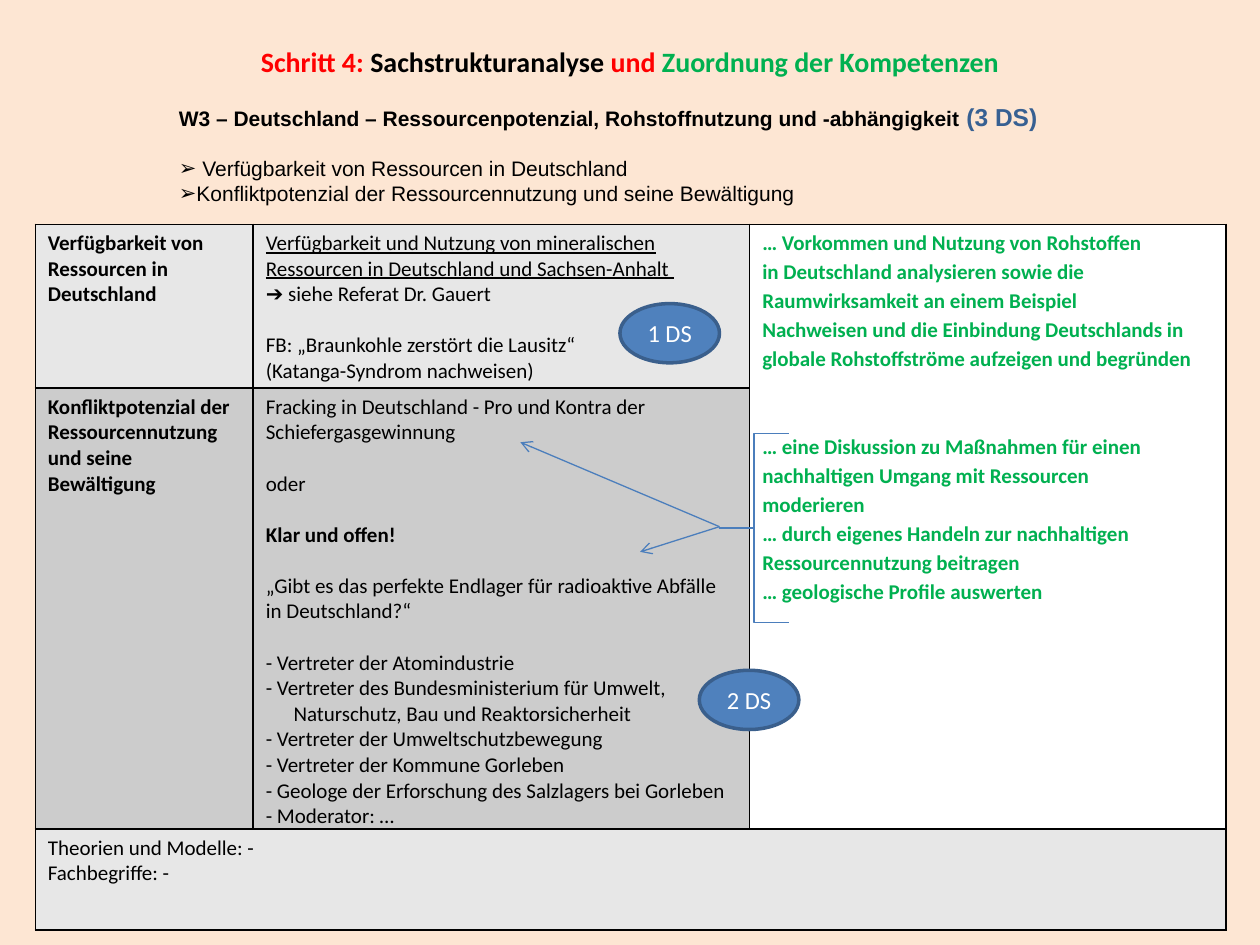
from lxml import etree
from pptx import Presentation
from pptx.dml.color import RGBColor
from pptx.enum.shapes import MSO_CONNECTOR, MSO_SHAPE
from pptx.enum.text import MSO_ANCHOR, PP_ALIGN
from pptx.oxml.ns import qn
from pptx.util import Inches, Pt

ELLIPSE, BRACE = MSO_SHAPE.OVAL, MSO_SHAPE.LEFT_BRACE
STRAIGHT = MSO_CONNECTOR.STRAIGHT
TOP, MIDDLE = MSO_ANCHOR.TOP, MSO_ANCHOR.MIDDLE
LEFT, CENTER = PP_ALIGN.LEFT, PP_ALIGN.CENTER

BLACK, WHITE, RED, GREEN = "000000", "FFFFFF", "FF0000", "00B050"
LIGHT, DARK = "E7E7E7", "CCCCCC"
BLUE, EDGE, THIN = "4F81BD", "3A5F8C", "4B7EBC"
BLANK = 14.6

COLS, ROWS = (1.73, 3.94, 3.78), (1.3, 3.5, 0.8)
TABLE_AT = (0.28, 1.78)
HUB = (5.71, 4.18)

RESOURCES = [
    ("Verfügbarkeit und Nutzung von mineralischen Ressourcen in Deutschland und Sachsen-Anhalt ",
     {"underline": True}),
    ("➔ siehe Referat Dr. Gauert", {}),
    ("FB: „Braunkohle zerstört die Lausitz“", {"before": BLANK}),
    ("(Katanga-Syndrom nachweisen)", {}),
]
CONFLICTS = [
    ("Fracking in Deutschland - Pro und Kontra der Schiefergasgewinnung", {}),
    ("oder", {"before": BLANK}),
    ("Klar und offen!", {"before": BLANK, "bold": True}),
    ("„Gibt es das perfekte Endlager für radioaktive Abfälle in Deutschland?“", {"before": BLANK}),
    (" Vertreter der Atomindustrie", {"before": BLANK, "bullet": "-"}),
    (" Vertreter des Bundesministerium für Umwelt,", {"bullet": "-"}),
    ("Naturschutz, Bau und Reaktorsicherheit", {"indent": 0.22}),
    (" Vertreter der Umweltschutzbewegung", {"bullet": "-"}),
    (" Vertreter der Kommune Gorleben", {"bullet": "-"}),
    (" Geologe der Erforschung des Salzlagers bei Gorleben", {"bullet": "-"}),
    (" Moderator: …", {"bullet": "-"}),
]
SKILLS = [
    "… Vorkommen und Nutzung von Rohstoffen",
    "in Deutschland analysieren sowie die",
    "Raumwirksamkeit an einem Beispiel",
    "Nachweisen und die Einbindung Deutschlands in",
    "globale Rohstoffströme aufzeigen und begründen",
    "… eine Diskussion zu Maßnahmen für einen",
    "nachhaltigen Umgang mit Ressourcen",
    "moderieren",
    "… durch eigenes Handeln zur nachhaltigen",
    "Ressourcennutzung beitragen",
    "… geologische Profile auswerten",
]
SKILL_GROUP_START = 5


def rgb(value):
    """Turn a hex string into a colour."""
    return RGBColor.from_string(value)


def box(*lengths):
    """Turn lengths in inches into slide units."""
    return [Inches(n) for n in lengths]


def write(tf, text, size=12, color=BLACK, font="Calibri", bold=False, underline=False,
          align=LEFT, before=0, after=0, indent=0, bullet=None, same_line=False):
    """Append a run, in a new paragraph unless it continues the line."""
    p = tf.paragraphs[-1]
    if not same_line:
        if p.runs:
            p = tf.add_paragraph()
        p.alignment = align
        p.space_before, p.space_after = Pt(before), Pt(after)
        pPr = p._p.get_or_add_pPr()
        pPr.set("marL", str(Inches(indent)))
        pPr.set("indent", "0")
        if bullet:
            etree.SubElement(pPr, qn("a:buFont"), typeface=font)
            etree.SubElement(pPr, qn("a:buChar"), char=bullet)
        else:
            etree.SubElement(pPr, qn("a:buNone"))
    r = p.add_run()
    r.text = text
    r.font.size, r.font.name = Pt(size), font
    r.font.bold, r.font.underline = bold, underline
    r.font.color.rgb = rgb(color)


def frame(tf, margins, anchor):
    """Set wrapping, margins and anchor of a text frame."""
    tf.word_wrap = True
    tf.margin_left, tf.margin_top, tf.margin_right, tf.margin_bottom = box(*margins)
    tf.vertical_anchor = anchor


def add_title(s):
    """Fill the title placeholder with its coloured parts."""
    sp = s.shapes.title
    sp.left, sp.top, sp.width, sp.height = box(0.5, 0.3, 9, 0.38)
    tf = sp.text_frame
    frame(tf, (0.1, 0.05, 0.1, 0.05), MIDDLE)
    parts = [("Schritt 4: ", RED), ("Sachstrukturanalyse", BLACK),
             (" und ", RED), ("Zuordnung der Kompetenzen", GREEN)]
    for i, (text, color) in enumerate(parts):
        write(tf, text, size=16, color=color, bold=True, align=CENTER, same_line=i > 0)


def add_topic(s):
    """Add the topic line with its two bullets."""
    tf = s.shapes.add_textbox(*box(0.43, 0.54, 9.13, 1.8)).text_frame
    frame(tf, (0.99, 0.27, 0.98, 0.3), TOP)
    write(tf, "W3 – Deutschland – Ressourcenpotenzial, Rohstoffnutzung und -abhängigkeit ",
          font="Arial", bold=True)
    write(tf, "(3 DS)", size=14, color="376092", font="Arial", bold=True, same_line=True)
    write(tf, " Verfügbarkeit von Ressourcen in Deutschland", font="Arial", bullet="➢", before=13.8)
    write(tf, "Konfliktpotenzial der Ressourcennutzung und seine Bewältigung", font="Arial", bullet="➢")


def style_cell(cell, fill):
    """Give a cell its borders, fill and margins."""
    tcPr = cell._tc.get_or_add_tcPr()
    for side in ("a:lnL", "a:lnR", "a:lnT", "a:lnB"):
        ln = etree.SubElement(tcPr, qn(side), w=str(Pt(1)))
        solid = etree.SubElement(ln, qn("a:solidFill"))
        etree.SubElement(solid, qn("a:srgbClr"), val=BLACK)
    cell.fill.solid()
    cell.fill.fore_color.rgb = rgb(fill)
    cell.margin_left, cell.margin_top, cell.margin_right, cell.margin_bottom = box(0.1, 0.05, 0.1, 0)


def add_plan(s):
    """Add the table of topics, contents and skills."""
    shape = s.shapes.add_table(len(ROWS), len(COLS), *box(*TABLE_AT, sum(COLS), sum(ROWS)))
    table = shape.table
    table.first_row = table.horz_banding = False
    for col, width in zip(table.columns, COLS):
        col.width = Inches(width)
    for row, height in zip(table.rows, ROWS):
        row.height = Inches(height)
    fills = [(LIGHT, LIGHT, WHITE), (DARK, DARK, WHITE), (LIGHT,) * 3]
    for i, row in enumerate(fills):
        for j, fill in enumerate(row):
            style_cell(table.cell(i, j), fill)
    table.cell(0, 2).merge(table.cell(1, 2))
    table.cell(2, 0).merge(table.cell(2, 2))
    skills = [(text, {"color": GREEN, "bold": True, "after": 1,
                      "before": 34.3 if i == SKILL_GROUP_START else 1})
              for i, text in enumerate(SKILLS)]
    contents = {
        (0, 0): [("Verfügbarkeit von Ressourcen in Deutschland", {"bold": True})],
        (0, 1): RESOURCES,
        (0, 2): skills,
        (1, 0): [("Konfliktpotenzial der Ressourcennutzung und seine Bewältigung", {"bold": True})],
        (1, 1): CONFLICTS,
        (2, 0): [("Theorien und Modelle: -", {}), ("Fachbegriffe: -", {})],
    }
    for place, lines in contents.items():
        for text, style in lines:
            write(table.cell(*place).text_frame, text, **style)


def add_badge(s, left, top, text):
    """Add an ellipse that states the number of lessons."""
    sp = s.shapes.add_shape(ELLIPSE, *box(left, top, 0.79, 0.47))
    sp.shadow.inherit = False
    sp.fill.solid()
    sp.fill.fore_color.rgb = rgb(BLUE)
    sp.line.color.rgb, sp.line.width = rgb(EDGE), Pt(2)
    frame(sp.text_frame, (0, 0, 0, 0), MIDDLE)
    write(sp.text_frame, text, size=14, color=WHITE, align=CENTER)


def add_brace(s):
    """Add the square brace beside the skills."""
    sp = s.shapes.add_shape(BRACE, *box(HUB[0], 3.44, 0.55, 1.5))
    sp.shadow.inherit = False
    sp.adjustments[0], sp.adjustments[1] = 0, 0.5
    sp.fill.background()
    sp.line.color.rgb, sp.line.width = rgb(THIN), Pt(0.75)


def add_arrow(s, end):
    """Add an arrow from the brace to a point."""
    cx = s.shapes.add_connector(STRAIGHT, *box(*HUB, *end))
    cx.line.color.rgb, cx.line.width = rgb(THIN), Pt(0.75)
    etree.SubElement(cx.line._get_or_add_ln(), qn("a:tailEnd"), type="arrow")
    etree.SubElement(cx._element.spPr, qn("a:effectLst"))


def main():
    """Build the slide and save it."""
    prs = Presentation()
    prs.slide_width, prs.slide_height = box(10, 7.5)
    s = prs.slides.add_slide(prs.slide_layouts[5])
    s.background.fill.solid()
    s.background.fill.fore_color.rgb = rgb("FDE6D3")
    add_title(s)
    add_topic(s)
    add_plan(s)
    add_badge(s, 4.92, 2.41, "1 DS")
    add_badge(s, 5.55, 5.32, "2 DS")
    add_brace(s)
    for end in ((4.13, 3.51), (5.08, 4.38)):
        add_arrow(s, end)
    prs.save("out.pptx")


if __name__ == "__main__":
    main()
